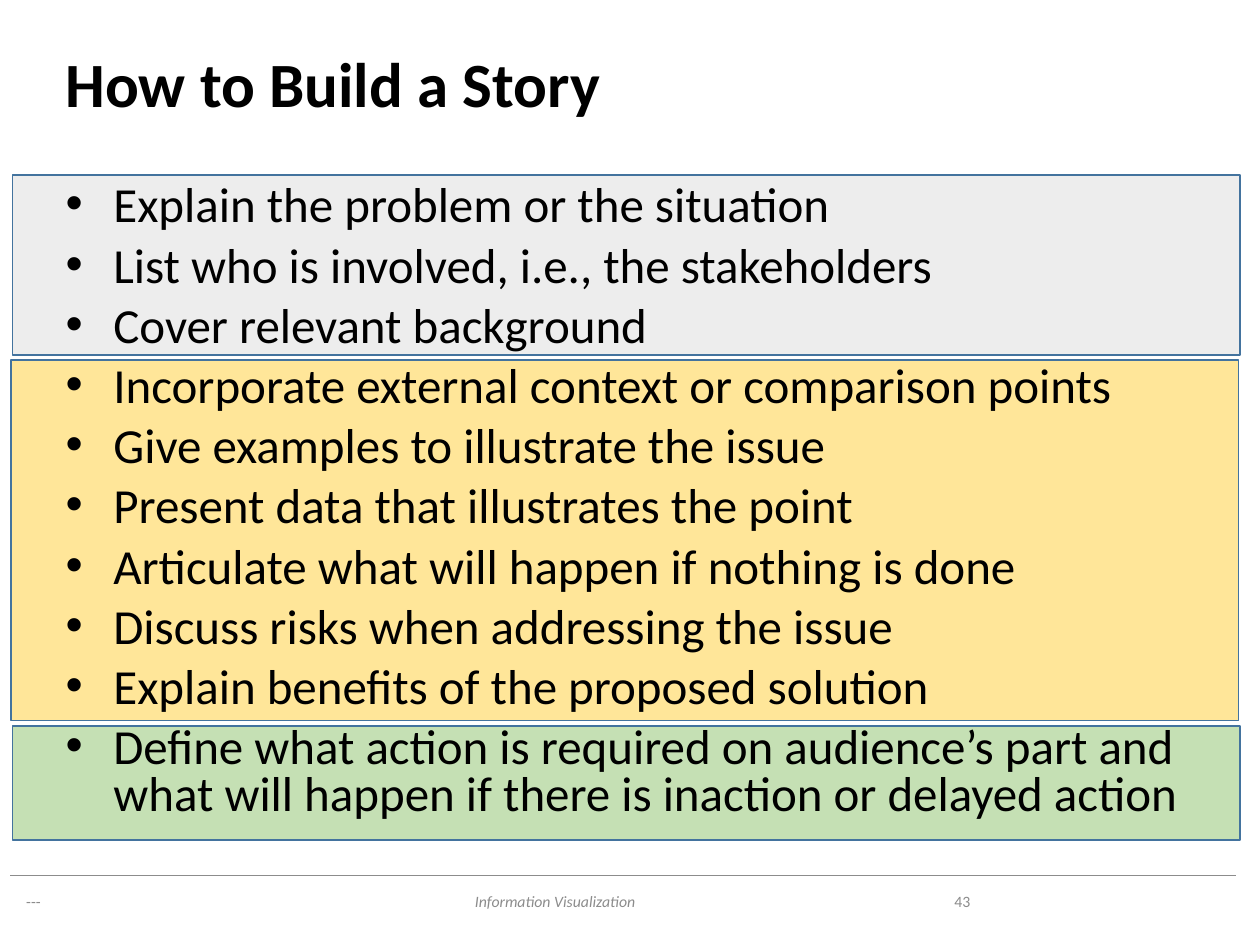
from lxml import etree
from pptx import Presentation
from pptx.dml.color import RGBColor
from pptx.enum.shapes import MSO_CONNECTOR, MSO_SHAPE
from pptx.enum.text import MSO_ANCHOR, MSO_AUTO_SIZE, PP_ALIGN
from pptx.oxml.ns import qn
from pptx.util import Inches, Pt

FONT = "Calibri"
BLACK, GRAY, BAND_LINE = "000000", "8C8C8C", "43739E"
STEPS = [
    "Explain the problem or the situation",
    "List who is involved, i.e., the stakeholders",
    "Cover relevant background",
    "Incorporate external context or comparison points",
    "Give examples to illustrate the issue",
    "Present data that illustrates the point",
    "Articulate what will happen if nothing is done",
    "Discuss risks when addressing the issue",
    "Explain benefits of the proposed solution",
    "Define what action is required on audience’s part and "
    "what will happen if there is inaction or delayed action",
]
BANDS = [  # box, fill
    ((0.1, 5.76, 9.74, 0.91), "C5E0B4"),
    ((0.09, 2.86, 9.74, 2.86), "FFE699"),
    ((0.1, 1.39, 9.74, 1.43), "EDEDED"),
]


def color(value):
    return RGBColor.from_string(value)


def add_run(paragraph, text, size, ink, bold=False, italic=False):
    run = paragraph.add_run()
    run.text = text
    font = run.font
    font.name, font.size, font.bold, font.italic = FONT, Pt(size), bold, italic
    font.color.rgb = color(ink)


def place_placeholder(slide, placeholder, box, anchor):
    """Move a placeholder to its box, in front of the shapes drawn so far."""
    left, top, width, height = map(Inches, box)
    placeholder.left, placeholder.top = left, top
    placeholder.width, placeholder.height = width, height
    slide.shapes._spTree.append(placeholder._element)
    frame = placeholder.text_frame
    frame.word_wrap = True
    frame.auto_size = MSO_AUTO_SIZE.NONE
    frame.vertical_anchor = anchor
    return frame


def add_bullet(paragraph):
    properties = paragraph._p.get_or_add_pPr()
    properties.set("marL", str(Inches(0.38)))
    properties.set("indent", str(-Inches(0.38)))
    etree.SubElement(properties, qn("a:buFont"), typeface="Arial")
    etree.SubElement(properties, qn("a:buChar"), char="•")


def add_band(slide, box, fill):
    band = slide.shapes.add_shape(MSO_SHAPE.RECTANGLE, *map(Inches, box))
    band.shadow.inherit = False
    band.fill.solid()
    band.fill.fore_color.rgb = color(fill)
    band.line.color.rgb = color(BAND_LINE)
    band.line.width = Pt(1)


def add_title(slide, box):
    frame = place_placeholder(slide, slide.shapes.title, box, MSO_ANCHOR.MIDDLE)
    paragraph = frame.paragraphs[0]
    paragraph.alignment = PP_ALIGN.LEFT
    paragraph.line_spacing = 0.9
    add_run(paragraph, "How to Build a Story", 36, BLACK, bold=True)


def add_steps(slide, box):
    frame = place_placeholder(slide, slide.placeholders[1], box, MSO_ANCHOR.TOP)
    for index, step in enumerate(STEPS):
        paragraph = frame.add_paragraph() if index else frame.paragraphs[0]
        add_bullet(paragraph)
        paragraph.line_spacing = 0.8
        paragraph.space_before = Pt(7.5 if index else 0)
        add_run(paragraph, step, 28, BLACK)


def add_footer(slide, left, top, width):
    rule = slide.shapes.add_connector(
        MSO_CONNECTOR.STRAIGHT,
        Inches(left), Inches(top), Inches(left + width), Inches(top))
    rule.line.color.rgb = color(GRAY)
    rule.line.width = Pt(0.5)
    etree.SubElement(rule._element.spPr, qn("a:effectLst"))
    for offset, box_width, text, alignment, italic in [
        (3.59, 2.92, "Information Visualization", PP_ALIGN.LEFT, True),
        (0.03, 3.38, "---", PP_ALIGN.LEFT, False),
        (6.68, 1.04, "43", PP_ALIGN.RIGHT, False),
    ]:
        text_box = slide.shapes.add_textbox(
            Inches(left + offset), Inches(top), Inches(box_width), Inches(0.4))
        frame = text_box.text_frame
        frame.word_wrap = True
        frame.vertical_anchor = MSO_ANCHOR.MIDDLE
        paragraph = frame.paragraphs[0]
        paragraph.alignment = alignment
        add_run(paragraph, text, 9, GRAY, italic=italic)


def main():
    presentation = Presentation()
    presentation.slide_width, presentation.slide_height = Inches(10), Inches(7.5)
    slide = presentation.slides.add_slide(presentation.slide_layouts[1])
    for box, fill in BANDS:
        add_band(slide, box, fill)
    add_title(slide, (0.42, 0.17, 9.17, 1.05))
    add_steps(slide, (0.42, 1.42, 9.17, 5.34))
    add_footer(slide, 0.08, 6.95, 9.73)
    presentation.save("out.pptx")


if __name__ == "__main__":
    main()
